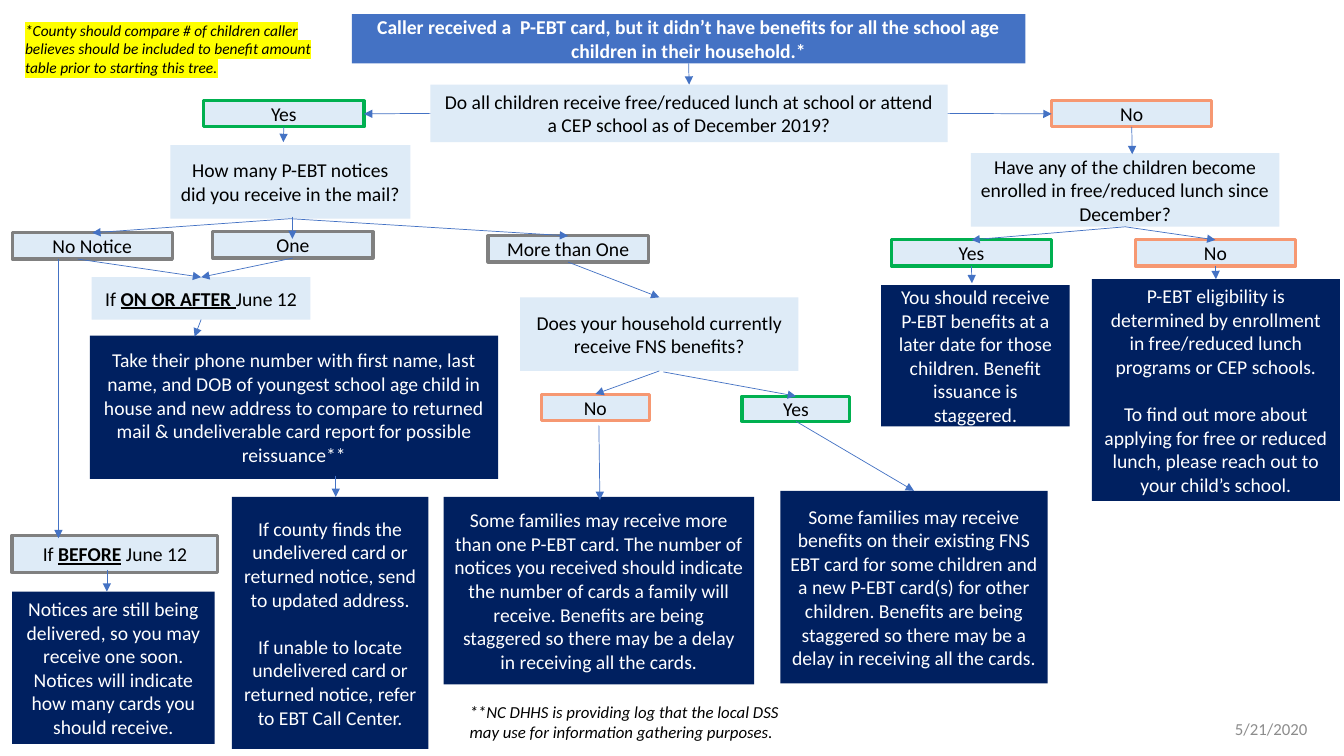
"""Build the P-EBT caller decision tree slide."""
from lxml.etree import SubElement
from pptx import Presentation
from pptx.dml.color import RGBColor
from pptx.enum.shapes import MSO_CONNECTOR, MSO_SHAPE
from pptx.enum.text import MSO_ANCHOR, PP_ALIGN
from pptx.oxml.ns import qn
from pptx.util import Inches, Pt

THEME = {
    "font": "Calibri", "body": 14, "small": 10, "footnote": 12, "tip": 11,
    "border": 2.25, "arrow_width": 0.5, "paragraph_gap": 17,
    "arrow": "4472C4", "black": "000000", "white": "FFFFFF",
    "date": "8C8C8C", "highlight": "FFFF00",
}
STYLES = {
    "title": ("4472C4", None, "white"),
    "question": ("DEEBF7", None, "black"),
    "yes": ("DEEBF7", "00B050", "black"),
    "no": ("DEEBF7", "F69872", "black"),
    "count": ("DEEBF7", "808080", "black"),
    "answer": ("002060", None, "white"),
}
TOP, LEFT, BOTTOM, RIGHT = range(4)

BOXES = {
    "title": ("title", (3.49, 0.14, 6.68, 0.49), [[
        ("Caller received a  P-EBT card, but it didn’t have benefits for all the "
         "school age children in their household.*", "b")]]),
    "lunch": ("question", (4.27, 0.84, 5.13, 0.57),
              "Do all children receive free/reduced lunch at school or attend "
              "a CEP school as of December 2019?"),
    "lunch_yes": ("yes", (2.02, 1, 1.59, 0.26), "Yes"),
    "lunch_no": ("no", (10.43, 1, 1.59, 0.26), "No"),
    "notices": ("question", (1.69, 1.44, 2.38, 0.73),
                "How many P-EBT notices did you receive in the mail?"),
    "none": ("count", (0.12, 2.31, 1.59, 0.26), "No Notice"),
    "one": ("count", (2.11, 2.3, 1.59, 0.26), "One"),
    "several": ("count", (4.84, 2.34, 1.59, 0.26), "More than One"),
    "enrolled": ("question", (9.63, 1.52, 3.06, 0.73),
                 "Have any of the children become enrolled in free/reduced lunch "
                 "since December?"),
    "enrolled_yes": ("yes", (8.84, 2.38, 1.59, 0.26), "Yes"),
    "enrolled_no": ("no", (11.26, 2.38, 1.59, 0.26), "No"),
    "later": ("answer", (8.74, 2.83, 1.87, 1.4),
              "You should receive P-EBT benefits at a later date for those "
              "children. Benefit issuance is staggered."),
    "eligibility": ("answer", (10.83, 2.77, 2.46, 2.2), [
        [("P-EBT eligibility is determined by enrollment in free/reduced lunch "
          "programs or CEP schools.", "")],
        [("To find out more about applying for free or reduced lunch, please "
          "reach out to your child’s school.", "")]]),
    "fns": ("question", (5.16, 2.95, 2.76, 0.73),
            "Does your household currently receive FNS benefits?"),
    "fns_no": ("no", (5.37, 3.91, 1.07, 0.26), "No"),
    "fns_yes": ("yes", (7.36, 3.93, 1.07, 0.25), "Yes"),
    "many_cards": ("answer", (4.4, 4.93, 3.08, 1.86),
                   "Some families may receive more than one P-EBT card. The number "
                   "of notices you received should indicate the number of cards a "
                   "family will receive. Benefits are being staggered so there may "
                   "be a delay in receiving all the cards."),
    "existing_card": ("answer", (7.74, 4.87, 2.65, 1.91),
                      "Some families may receive benefits on their existing FNS EBT "
                      "card for some children and a new P-EBT card(s) for other "
                      "children. Benefits are being staggered so there may be a "
                      "delay in receiving all the cards."),
    "after": ("question", (0.91, 2.75, 2.17, 0.42),
              [[("If ", ""), ("ON OR AFTER ", "bu"), ("June 12", "")]]),
    "reissue": ("answer", (0.89, 3.33, 4.05, 1.42), [[
        ("Take their phone number with first name, last name, and DOB of youngest "
         "school age child in house and new address to compare to returned mail & "
         "undeliverable card report", ""),
        (" ", "is"), ("for possible reissuance**", "")]]),
    "county": ("answer", (2.3, 4.93, 1.95, 2.5), [
        [("If county finds the undelivered card or returned notice, send to "
          "updated address.", "")],
        [("If unable to locate undelivered card or returned notice, refer to EBT "
          "Call Center.", "")]]),
    "before": ("count", (0.12, 5.31, 2.04, 0.37),
               [[("If ", ""), ("BEFORE", "bu"), (" June 12", "")]]),
    "wait": ("answer", (0.12, 5.87, 2.01, 1.51),
             "Notices are still being delivered, so you may receive one soon. "
             "Notices will indicate how many cards you should receive."),
}
ARROWS = [
    (("title", BOTTOM), ("lunch", TOP)),
    (("lunch", LEFT), ("lunch_yes", RIGHT)),
    (("lunch", RIGHT), ("lunch_no", LEFT)),
    (("lunch_yes", BOTTOM), (2.81, 1.41)),
    (("lunch_no", BOTTOM), (11.23, 1.53)),
    (("notices", BOTTOM), ("none", TOP)),
    ((2.9, 2.15), (2.9, 2.37)),
    (("notices", BOTTOM), ("several", TOP)),
    ((0.77, 2.57), ("after", TOP)),
    (("one", BOTTOM), ("after", TOP)),
    (("after", BOTTOM), (1.93, 3.34)),
    ((3.33, 4.72), (3.33, 4.93)),
    ((0.58, 2.57), (0.58, 5.34)),
    ((1.06, 5.65), (1.06, 5.87)),
    (("several", BOTTOM), ("fns", TOP)),
    (("fns", BOTTOM), ("fns_no", TOP)),
    ((6.58, 3.69), ("fns_yes", TOP)),
    ((5.94, 4.22), (5.95, 4.96)),
    (("fns_yes", BOTTOM), ("existing_card", TOP)),
    (("enrolled", BOTTOM), ("enrolled_yes", TOP)),
    (("enrolled", BOTTOM), ("enrolled_no", TOP)),
    (("enrolled_yes", BOTTOM), (9.64, 2.81)),
    (("enrolled_no", BOTTOM), ("eligibility", TOP)),
]
NOTES = [
    ((0.15, 0.16, 3.18, 0.66), "tip", "black", "ih", MSO_ANCHOR.TOP,
     "*County should compare # of children caller believes should be included to "
     "benefit amount table prior to starting this tree."),
    ((4.56, 6.91, 3.54, 0.5), "footnote", "black", "i", MSO_ANCHOR.TOP,
     "**NC DHHS is providing log that the local DSS may use for information "
     "gathering purposes."),
    ((12.15, 7.03, 1.09, 0.4), "footnote", "date", "", MSO_ANCHOR.MIDDLE, "5/21/2020"),
]


def rgb(value):
    """Return a colour from its hex digits."""
    return RGBColor.from_string(value)


def write(sp, content, size, color, align, anchor):
    """Fill a shape with paragraphs of (text, flags) runs."""
    tf = sp.text_frame
    tf.word_wrap = True
    tf.vertical_anchor = anchor
    for i, runs in enumerate(content):
        p = tf.add_paragraph() if i else tf.paragraphs[0]
        p.alignment = align
        if i:
            p.space_before = Pt(THEME["paragraph_gap"])
        for text, flags in runs:
            r = p.add_run()
            r.text = text
            font = r.font
            font.name = THEME["font"]
            font.size = Pt(THEME["small" if "s" in flags else size])
            font.color.rgb = rgb(THEME[color])
            font.bold = "b" in flags
            font.italic = "i" in flags
            font.underline = "u" in flags
            if "h" in flags:
                rpr = r._r.get_or_add_rPr()
                mark = SubElement(rpr, qn("a:highlight"))
                SubElement(mark, qn("a:srgbClr")).set("val", THEME["highlight"])
                rpr.find(qn("a:latin")).addprevious(mark)


def add_box(s, style, box, content):
    """Add one decision tree box."""
    fill, border, color = STYLES[style]
    sp = s.shapes.add_shape(MSO_SHAPE.RECTANGLE, *map(Inches, box))
    sp.shadow.inherit = False
    sp.fill.solid()
    sp.fill.fore_color.rgb = rgb(fill)
    if border:
        sp.line.color.rgb = rgb(border)
        sp.line.width = Pt(THEME["border"])
    else:
        sp.line.fill.background()
    paragraphs = [[(content, "")]] if isinstance(content, str) else content
    write(sp, paragraphs, "body", color, PP_ALIGN.CENTER, MSO_ANCHOR.MIDDLE)
    return sp


def add_arrow(s, shapes, start, end):
    """Add an arrow between box sides or free points."""
    points = [(0, 0) if isinstance(e[0], str) else e for e in (start, end)]
    cxn = s.shapes.add_connector(
        MSO_CONNECTOR.STRAIGHT, *[Inches(v) for point in points for v in point])
    for join, (name, side) in ((cxn.begin_connect, start), (cxn.end_connect, end)):
        if isinstance(name, str):
            join(shapes[name], side)
    cxn.line.color.rgb = rgb(THEME["arrow"])
    cxn.line.width = Pt(THEME["arrow_width"])
    SubElement(cxn.line._get_or_add_ln(), qn("a:tailEnd")).set("type", "triangle")
    SubElement(cxn._element.spPr, qn("a:effectLst"))


def main():
    """Lay out the slide and save it."""
    prs = Presentation()
    prs.slide_width, prs.slide_height = Inches(13.33), Inches(7.5)
    s = prs.slides.add_slide(prs.slide_layouts[6])
    shapes = {name: add_box(s, *box) for name, box in BOXES.items()}
    for start, end in ARROWS:
        add_arrow(s, shapes, start, end)
    for box, size, color, flags, anchor, text in NOTES:
        sp = s.shapes.add_textbox(*map(Inches, box))
        write(sp, [[(text, flags)]], size, color, PP_ALIGN.LEFT, anchor)
    prs.save("out.pptx")


if __name__ == "__main__":
    main()
